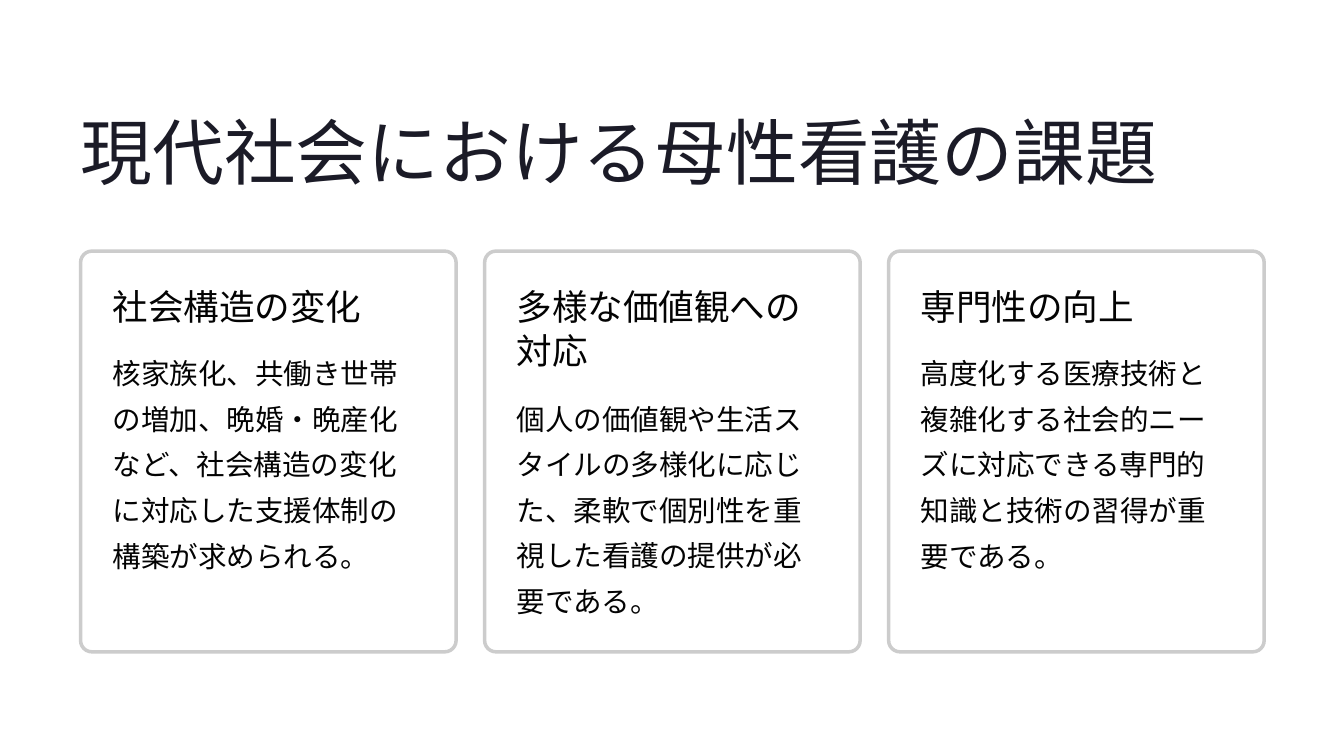
import math

import pptx
import pptx.dml.color
import pptx.enum.shapes
import pptx.enum.text
import pptx.oxml.ns
import pptx.util
from lxml import etree

RGBColor = pptx.dml.color.RGBColor
Inches = pptx.util.Inches
Pt = pptx.util.Pt

WHITE = RGBColor(0xFF, 0xFF, 0xFF)
BORDER = RGBColor(0xCC, 0xCC, 0xCC)
NAVY = RGBColor(0x1B, 0x1B, 0x27)
INK = RGBColor(0x03, 0x03, 0x03)

SLIDE_W, SLIDE_H = 16, 9
MARGIN = 0.96
TITLE_W = 12.9
CARD_W, CARD_H, CARD_TOP = 4.47, 4.77, 2.99
CARD_STEP = CARD_W + 0.34
PADDING = 0.38
TEXT_W = 3.7
HEADING_LINE_H = 0.54
HEADING_GAP = 0.2

TITLE = {"size": Pt(61.5), "name": "Inter", "color": NAVY, "leading": Pt(76.5)}
HEADING = {"size": Pt(30.5), "name": "Inter", "color": INK, "leading": Pt(38)}
BODY = {"size": Pt(24.5), "name": "Cabin", "color": INK, "leading": Pt(39)}

CARDS = [
    ("社会構造の変化",
     "核家族化、共働き世帯の増加、晩婚・晩産化など、社会構造の変化に対応した支援体制の構築が求められる。"),
    ("多様な価値観への対応",
     "個人の価値観や生活スタイルの多様化に応じた、柔軟で個別性を重視した看護の提供が必要である。"),
    ("専門性の向上",
     "高度化する医療技術と複雑化する社会的ニーズに対応できる専門的知識と技術の習得が重要である。"),
]


def add_text(s, text, left, top, width, height, style, wrap=True):
    tf = s.shapes.add_textbox(*map(Inches, (left, top, width, height))).text_frame
    frame = {"margin_left": 0, "margin_top": 0, "margin_right": 0, "margin_bottom": 0,
             "word_wrap": wrap, "vertical_anchor": pptx.enum.text.MSO_ANCHOR.TOP}
    for key, value in frame.items():
        setattr(tf, key, value)
    p = tf.paragraphs[0]
    p.line_spacing = style["leading"]
    r = p.add_run()
    r.text = text
    for key in ("size", "name"):
        setattr(r.font, key, style[key])
    r.font.color.rgb = style["color"]


def add_panel(s, left):
    sp = s.shapes.add_shape(pptx.enum.shapes.MSO_SHAPE.ROUNDED_RECTANGLE,
                            *map(Inches, (left, CARD_TOP, CARD_W, CARD_H)))
    sp.adjustments[0] = 0.03
    sp.shadow.inherit = False
    sp.fill.solid()
    sp.fill.fore_color.rgb = WHITE
    color = sp.fill._xPr.find(".//" + pptx.oxml.ns.qn("a:srgbClr"))
    etree.SubElement(color, pptx.oxml.ns.qn("a:alpha"), val="95000")
    sp.line.color.rgb = BORDER
    sp.line.width = Pt(3)


def add_card(s, column, heading, body):
    """Place a card in its column; the body starts below the wrapped heading."""
    left = MARGIN + column * CARD_STEP
    add_panel(s, left)
    lines = math.ceil(len(heading) * HEADING["size"].inches / TEXT_W)
    x, y, h = left + PADDING, CARD_TOP + PADDING, lines * HEADING_LINE_H
    add_text(s, heading, x, y, TEXT_W, h, HEADING, wrap=lines > 1)
    add_text(s, body, x, y + h + HEADING_GAP, TEXT_W, 2.73, BODY)


def main():
    prs = pptx.Presentation()
    prs.slide_width, prs.slide_height = Inches(SLIDE_W), Inches(SLIDE_H)
    s = prs.slides.add_slide(prs.slide_layouts[6])
    add_text(s, "現代社会における母性看護の課題", MARGIN, 1.24, TITLE_W, 1.07, TITLE, wrap=False)
    for column, (heading, body) in enumerate(CARDS):
        add_card(s, column, heading, body)
    prs.save("out.pptx")


if __name__ == "__main__":
    main()
